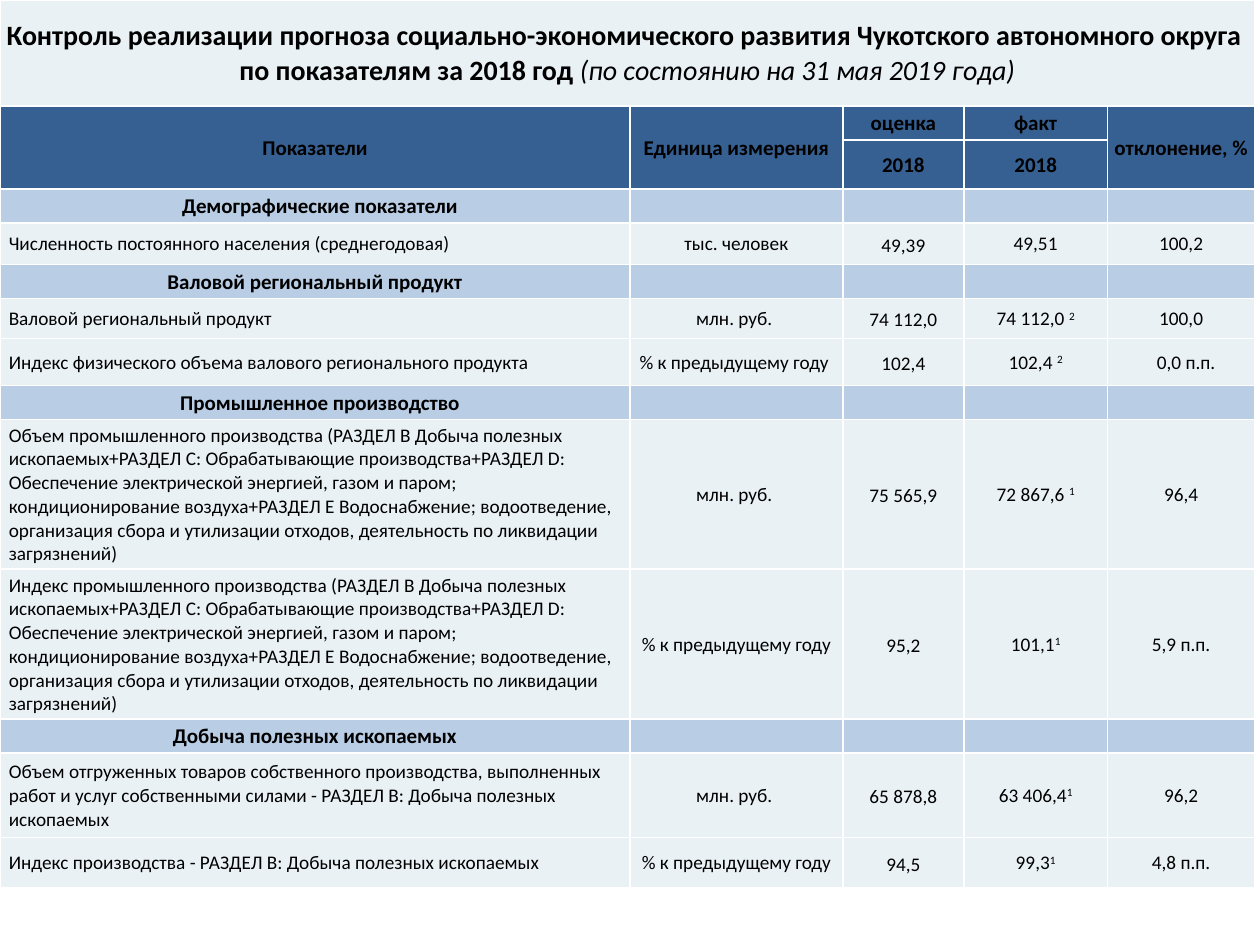
from lxml import etree
from pptx import Presentation
from pptx.dml.color import RGBColor
from pptx.enum.text import MSO_ANCHOR, PP_ALIGN
from pptx.oxml.ns import qn
from pptx.util import Inches, Pt

LEFT, CENTER = PP_ALIGN.LEFT, PP_ALIGN.CENTER
MIDDLE = MSO_ANCHOR.MIDDLE
PALE, NAVY, BLUE = "E9F1F5", "376092", "B9CDE5"
WHITE, BLACK = "FFFFFF", "000000"


def style(cell, fill):
    """Set fill, insets, white borders and a small size for empty text."""
    cell.fill.solid()
    cell.fill.fore_color.rgb = RGBColor.from_string(fill)
    cell.vertical_anchor = MIDDLE
    cell.margin_left = cell.margin_right = cell.margin_top = Inches(0.01)
    cell.margin_bottom = 0
    props = cell._tc.get_or_add_tcPr()
    for spot, side in enumerate(("lnL", "lnR", "lnT", "lnB")):
        line = etree.Element(qn("a:" + side), w=str(Pt(1)))
        solid = etree.SubElement(line, qn("a:solidFill"))
        etree.SubElement(solid, qn("a:srgbClr"), val=WHITE)
        props.insert(spot, line)
    para = cell.text_frame.paragraphs[0]
    etree.SubElement(para._p, qn("a:endParaRPr"), sz="1100")


def write(cell, text, size, bold=False, italic=False, align=CENTER, base=0):
    """Add one run to the cell; base raises it by that percentage."""
    para = cell.text_frame.paragraphs[0]
    para.alignment = align
    run = para.add_run()
    run.text = text
    font = run.font
    font.name, font.size = "Calibri", Pt(size)
    font.bold, font.italic = bold, italic
    font.color.rgb = RGBColor.from_string(BLACK)
    if base:
        run._r.get_or_add_rPr().set("baseline", str(base * 1000))


scope = (
    "промышленного производства (РАЗДЕЛ B Добыча полезных ископаемых"
    "+РАЗДЕЛ C: Обрабатывающие производства+РАЗДЕЛ D: Обеспечение "
    "электрической энергией, газом и паром; кондиционирование воздуха"
    "+РАЗДЕЛ E Водоснабжение; водоотведение, организация сбора и "
    "утилизации отходов, деятельность по ликвидации загрязнений)"
)
money, growth = "млн. руб. ", "% к предыдущему году"

# A section has one item; a data row has name, unit, plan, fact, note, change
body = [
    ("Демографические показатели",),
    ("Численность постоянного населения (среднегодовая)",
     "тыс. человек", "49,39", "49,51", "", "100,2"),
    ("Валовой региональный продукт",),
    ("Валовой региональный продукт",
     money, "74 112,0", "74 112,0 ", "2", "100,0"),
    ("Индекс физического объема валового регионального продукта",
     growth + " ", "102,4", "102,4 ", "2", "0,0 п.п."),
    ("Промышленное производство",),
    ("Объем " + scope, money, "75 565,9", "72 867,6 ", "1", "96,4"),
    ("Индекс " + scope, growth, "95,2", "101,1", "1", "5,9 п.п."),
    ("Добыча полезных ископаемых",),
    ("Объем отгруженных товаров собственного производства, выполненных "
     "работ и услуг собственными силами - РАЗДЕЛ B: Добыча полезных "
     "ископаемых", money, "65 878,8", "63 406,4", "1", "96,2"),
    ("Индекс производства - РАЗДЕЛ B: Добыча полезных ископаемых",
     growth, "94,5", "99,3", "1", "4,8 п.п."),
]
widths = [5, 1.69, 0.96, 1.14, 1.17]
heights = [0.84, 0.27, 0.39, 0.27, 0.33, 0.27, 0.32,
           0.37, 0.27, 1.19, 1.19, 0.27, 0.67, 0.4]

deck = Presentation()
deck.slide_width, deck.slide_height = Inches(10), Inches(7.5)
slide = deck.slides.add_slide(deck.slide_layouts[6])
table = slide.shapes.add_table(
    len(heights), len(widths), 0, 0,
    Inches(sum(widths)), Inches(sum(heights))).table
for col, width in zip(table.columns, widths):
    col.width = Inches(width)
for row, height in zip(table.rows, heights):
    row.height = Inches(height)

fills = [PALE, NAVY, NAVY] + [BLUE if len(item) == 1 else PALE for item in body]
for row, fill in zip(table.rows, fills):
    for cell in row.cells:
        style(cell, fill)

# Title
title = table.cell(0, 0)
title.merge(table.cell(0, 4))
write(title, "Контроль реализации прогноза социально-экономического "
      "развития Чукотского автономного округа ", 16, bold=True)
title.text_frame.paragraphs[0].add_line_break()
write(title, "по показателям за 2018 год ", 16, bold=True)
write(title, "(по состоянию на 31 мая 2019 года)", 16, italic=True)

# Column heads
heads = ["Показатели", "Единица измерения", "оценка", "факт", "отклонение, %"]
for c, head in enumerate(heads):
    cell = table.cell(1, c)
    write(cell, head, 12, bold=True)
    if c in (2, 3):
        write(table.cell(2, c), "2018", 12, bold=True)
    else:
        cell.merge(table.cell(2, c))

# Sections and data
for r, item in enumerate(body, 3):
    cells = table.rows[r].cells
    name, unit, plan, fact, change = cells
    if len(item) == 1:
        write(name, item[0], 12, bold=True)
        continue
    write(name, item[0], 11, align=LEFT)
    name.margin_left = Inches(0.07)
    write(unit, item[1], 11)
    write(plan, item[2], 11)
    plan.margin_left = plan.margin_right = Inches(0.07)
    plan.margin_top = 0
    plan.text_frame.paragraphs[0].line_spacing = 1.15
    write(fact, item[3], 11)
    if item[4]:
        write(fact, item[4], 11, base=30)
    write(change, item[5], 11)

# Small shifts to the right of centre
for r, c in ((3, 0), (8, 0), (7, 4)):
    table.cell(r, c).margin_left = Inches(0.09)

# Keep the empty-text mark last in each paragraph
for mark in list(table._tbl.iter(qn("a:endParaRPr"))):
    mark.getparent().append(mark)

deck.save("out.pptx")
